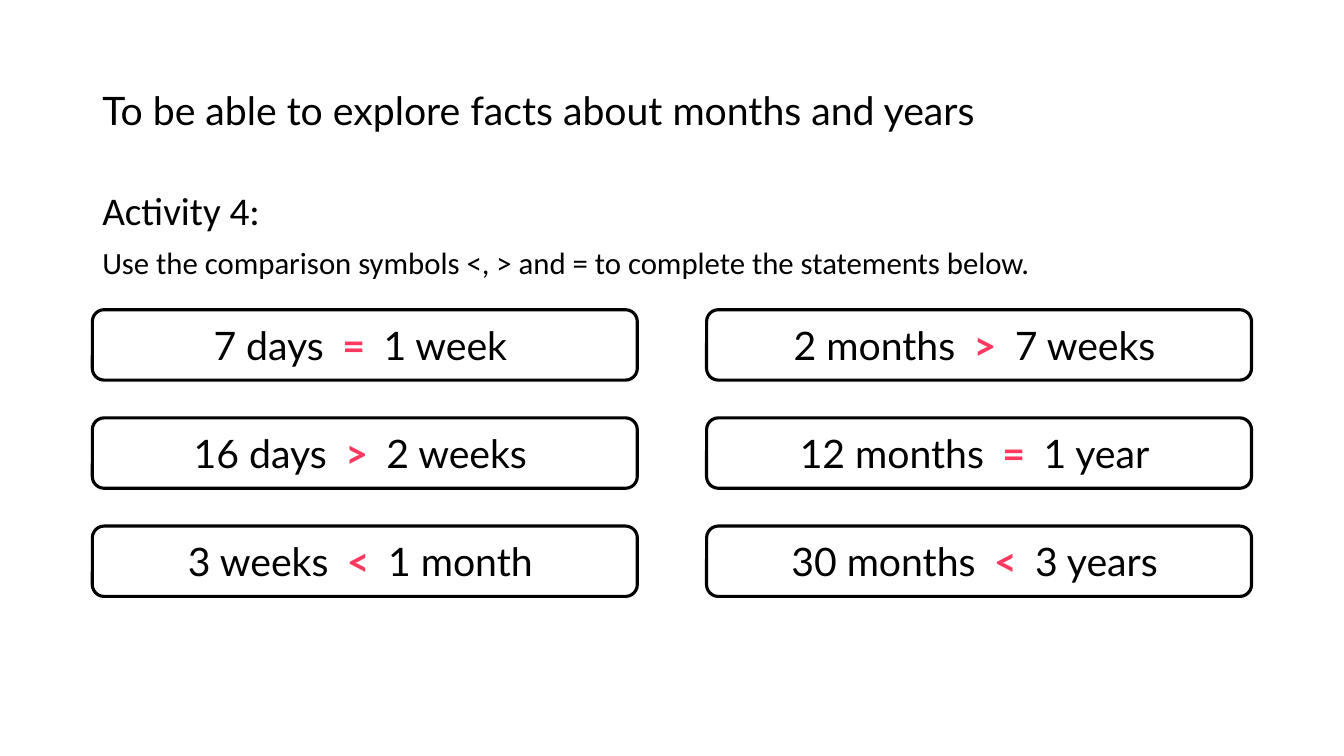
from pptx import Presentation
from pptx.dml.color import RGBColor
from pptx.enum.shapes import MSO_SHAPE as Shape
from pptx.enum.text import MSO_ANCHOR as Anchor, PP_ALIGN as Align
from pptx.util import Pt

PX = 9525
BLACK, WHITE, PINK = "000000", "FFFFFF", "FF3860"
STATEMENTS = [
    [("7 days", "=", "1 week"), ("2 months", ">", "7 weeks")],
    [("16 days", ">", "2 weeks"), ("12 months", "=", "1 year")],
    [("3 weeks", "<", "1 month"), ("30 months", "<", "3 years")],
]


def px(length):
    """Turn pixels into EMU."""
    return length * PX


def color(hex_string):
    """Turn a hex string into a colour."""
    return RGBColor.from_string(hex_string)


def add_run(paragraph, text, font="Lato", size=28, fill=BLACK, bold=False, spacing=0):
    """Add formatted text to a paragraph, with letter spacing in points."""
    run = paragraph.add_run()
    run.text = text
    run.font.name = font
    run.font.size = Pt(size)
    run.font.bold = bold
    run.font.color.rgb = color(fill)
    if spacing:
        run.font._element.set("spc", str(spacing * 100))


def add_text_frame(slide, left, top, width, height, anchor):
    """Add a wrapping text box and return its text frame."""
    frame = slide.shapes.add_textbox(px(left), px(top), px(width), px(height)).text_frame
    frame.word_wrap = True
    frame.vertical_anchor = anchor
    return frame


def add_title(slide, left, top, width, height):
    """Place the lesson objective."""
    paragraph = add_text_frame(slide, left, top, width, height, Anchor.MIDDLE).paragraphs[0]
    paragraph.line_spacing = 0.9
    add_run(paragraph, "To be able to explore facts about months and years")


def add_instructions(slide, left, top, width, height):
    """Place the activity heading and its task."""
    frame = add_text_frame(slide, left, top, width, height, Anchor.TOP)
    heading, task = frame.paragraphs[0], frame.add_paragraph()
    heading.line_spacing = task.line_spacing = 0.9
    task.space_before = Pt(10)
    add_run(heading, "Activity 4:", font="Calibri")
    add_run(task, "Use the comparison symbols <, > and = to complete the statements below.",
            font="Calibri", size=22)


def add_statement(slide, left, top, width, height, statement):
    """Draw one rounded card with a comparison."""
    card = slide.shapes.add_shape(Shape.ROUNDED_RECTANGLE, px(left), px(top), px(width), px(height))
    card.shadow.inherit = False
    card.fill.solid()
    card.fill.fore_color.rgb = color(WHITE)
    card.line.color.rgb = color(BLACK)
    card.line.width = Pt(2.25)
    frame = card.text_frame
    frame.word_wrap = True
    frame.vertical_anchor = Anchor.MIDDLE
    frame.margin_right = px(18)
    paragraph = frame.paragraphs[0]
    paragraph.alignment = Align.CENTER
    first, symbol, second = statement
    add_run(paragraph, first)
    add_run(paragraph, " ", spacing=6)
    add_run(paragraph, symbol, fill=PINK, bold=True)
    add_run(paragraph, " ", spacing=6)
    add_run(paragraph, second)


def add_statements(slide, left, top, width, height):
    """Lay out the cards in a grid that fills the box."""
    card_width, card_height = 519, 67
    column_step = width - card_width
    row_step = (height - card_height) // (len(STATEMENTS) - 1)
    for row, statements in enumerate(STATEMENTS):
        for column, statement in enumerate(statements):
            add_statement(slide, left + column * column_step, top + row * row_step,
                          card_width, card_height, statement)


def main():
    """Build and save the slide."""
    presentation = Presentation()
    presentation.slide_width, presentation.slide_height = px(1280), px(720)
    slide = presentation.slides.add_slide(presentation.slide_layouts[6])
    add_title(slide, 88, 38, 922, 139)
    add_instructions(slide, 88, 178, 1104, 110)
    add_statements(slide, 88, 295, 1104, 273)
    presentation.save("out.pptx")


if __name__ == "__main__":
    main()
